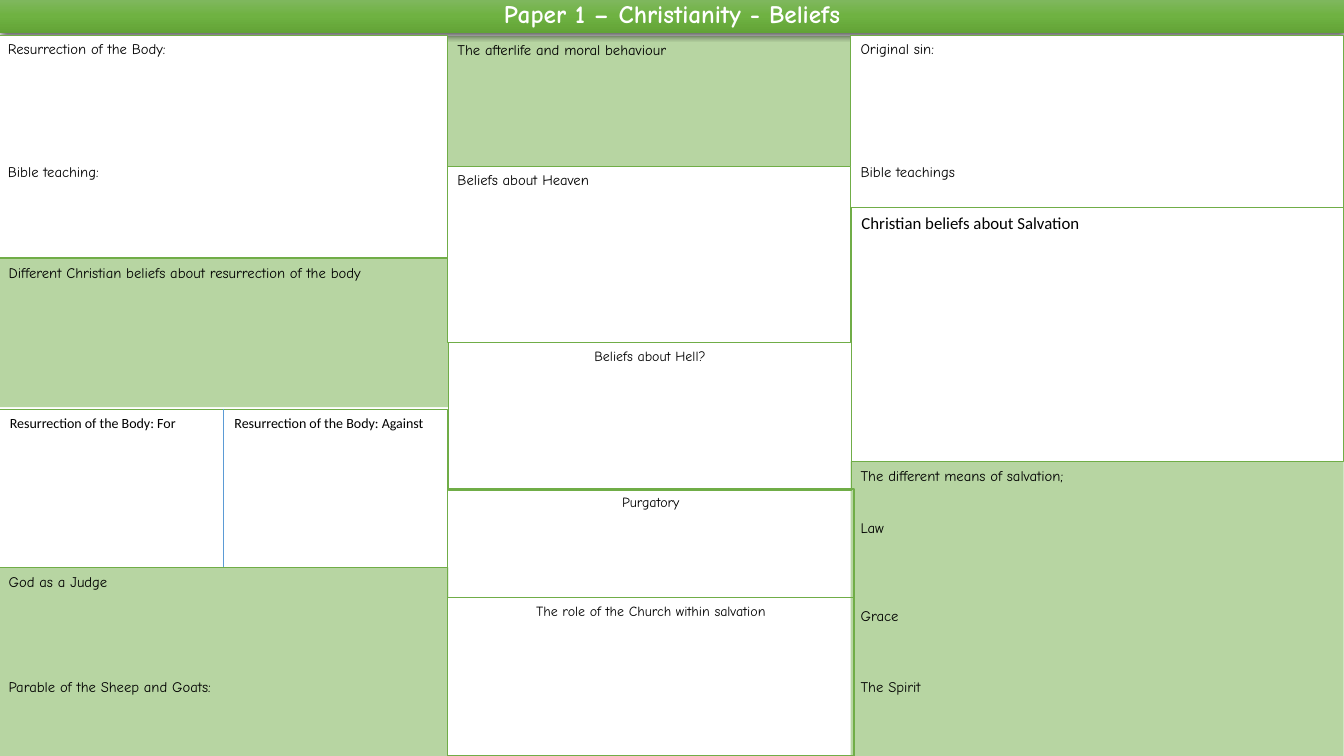
"""Build the revision sheet on Christian beliefs about salvation and the afterlife."""
from dataclasses import dataclass
from typing import NamedTuple, Optional

from lxml.etree import SubElement
from pptx import Presentation
from pptx.dml.color import RGBColor
from pptx.enum.shapes import MSO_CONNECTOR, MSO_SHAPE
from pptx.enum.text import MSO_ANCHOR, PP_ALIGN
from pptx.oxml import parse_xml
from pptx.oxml.ns import nsdecls, qn
from pptx.shapes.autoshape import Shape
from pptx.shapes.shapetree import SlideShapes
from pptx.util import Cm, Pt

GREEN = RGBColor(0x70, 0xAD, 0x47)
BLUE = RGBColor(0x5B, 0x9B, 0xD5)
WHITE = RGBColor(0xFF, 0xFF, 0xFF)
BLACK = RGBColor(0x00, 0x00, 0x00)
BANNER_STOPS = (
    (0, RGBColor(0x81, 0xB8, 0x61)),
    (50, RGBColor(0x6F, 0xB2, 0x42)),
    (100, RGBColor(0x62, 0xA3, 0x36)),
)
SLIDE_WIDTH, SLIDE_HEIGHT = 33.87, 19.05
WRITING_LINE = 12.55
PROMPT = {"name": "Comic Neue", "size": Pt(10.5)}
CENTRED_PROMPT = {"name": "Comic Neue", "size": Pt(10)}
HEADING = {"name": "Calibri", "size": Pt(12)}
SIDE_HEADING = {"name": "Calibri", "size": Pt(10)}
BANNER = {"name": "Comic Neue", "size": Pt(18), "bold": True}


class Prompt(NamedTuple):
    """A prompt and the number of writing lines left above it."""
    text: str
    lines_above: int = 0


@dataclass(frozen=True)
class Panel:
    """A box of the sheet, measured in centimetres."""
    left: float
    top: float
    width: float
    height: float
    prompts: tuple[Prompt, ...] = ()
    font: Optional[dict] = None
    fill: Optional[RGBColor] = None
    border: float = 0
    align: PP_ALIGN = PP_ALIGN.LEFT


TITLE = Panel(0, -0.05, SLIDE_WIDTH, 0.89, (Prompt("Paper 1 – Christianity - Beliefs"),),
              BANNER, align=PP_ALIGN.CENTER)
PANELS_BEHIND_TITLE = (
    Panel(11.28, 12.32, 10.24, 2.74, (Prompt("Purgatory"),),
          CENTRED_PROMPT, WHITE, 1, PP_ALIGN.CENTER),
    Panel(11.28, 0.91, 10.16, 6.25, (Prompt("The afterlife and moral behaviour"),), PROMPT, GREEN),
)
PANELS = (
    Panel(-0.05, 0.89, 11.33, 5.61,
          (Prompt("Resurrection of the Body:"), Prompt("Bible teaching:", 6)), PROMPT, WHITE, 1),
    Panel(-0.03, 6.53, 11.33, 3.73,
          (Prompt("Different Christian beliefs about resurrection of the body"),), PROMPT, GREEN),
    Panel(21.44, 0.89, 12.42, 4.34,
          (Prompt("Original sin:"), Prompt("Bible teachings", 6)), PROMPT, WHITE, 1),
    Panel(11.3, 8.64, 10.16, 3.71, (Prompt("Beliefs about Hell?"),),
          CENTRED_PROMPT, border=0.75, align=PP_ALIGN.CENTER),
    Panel(-0.03, 14.3, 11.33, 4.75,
          (Prompt("God as a Judge"), Prompt("Parable of the Sheep and Goats:", 5)), PROMPT, GREEN),
    Panel(0, 10.31, 11.28, 3.99, border=0.75),
    Panel(11.28, 4.19, 10.16, 4.45, (Prompt("Beliefs about Heaven"),), PROMPT, WHITE, 1),
    Panel(21.46, 5.23, 12.4, 6.4, (Prompt("Christian beliefs about Salvation"),),
          HEADING, border=0.75),
    Panel(11.28, 15.06, 10.24, 3.99, (Prompt("The role of the Church within salvation"),),
          CENTRED_PROMPT, WHITE, 1, PP_ALIGN.CENTER),
    Panel(21.44, 11.63, 12.42, 7.42,
          (Prompt("The different means of salvation;"), Prompt("Law", 2),
           Prompt("Grace", 4), Prompt("The Spirit", 3)), PROMPT, GREEN),
)
ARGUMENTS = (
    Panel(0, 10.31, 5.61, 0.69, (Prompt("Resurrection of the Body: For"),), SIDE_HEADING),
    Panel(5.66, 10.31, 5.61, 0.69, (Prompt("Resurrection of the Body: Against"),), SIDE_HEADING),
)


def bounds(panel: Panel) -> tuple[Cm, ...]:
    """Give the place and size of a panel as lengths."""
    return tuple(Cm(side) for side in (panel.left, panel.top, panel.width, panel.height))


def write_prompts(box: Shape, panel: Panel, color: RGBColor = BLACK) -> None:
    """Write the prompts of a panel with room for answers between them."""
    frame = box.text_frame
    frame.word_wrap = True
    frame.vertical_anchor = MSO_ANCHOR.TOP
    for index, prompt in enumerate(panel.prompts):
        paragraph = frame.add_paragraph() if index else frame.paragraphs[0]
        paragraph.alignment = panel.align
        paragraph.space_before = Pt(prompt.lines_above * WRITING_LINE)
        run = paragraph.add_run()
        run.text = prompt.text
        for attribute, value in panel.font.items():
            setattr(run.font, attribute, value)
        run.font.color.rgb = color


def draw_panel(shapes: SlideShapes, panel: Panel) -> None:
    """Draw a panel; green ones are half transparent."""
    box = shapes.add_shape(MSO_SHAPE.RECTANGLE, *bounds(panel))
    box.shadow.inherit = False
    if panel.fill is None:
        box.fill.background()
    else:
        box.fill.solid()
        box.fill.fore_color.rgb = panel.fill
    if panel.fill == GREEN:
        tint = box.fill._xPr.find(".//" + qn("a:srgbClr"))
        SubElement(tint, qn("a:alpha"), val="50000")
    if panel.border:
        box.line.color.rgb = GREEN
        box.line.width = Pt(panel.border)
    else:
        box.line.fill.background()
    write_prompts(box, panel)


def draw_title(shapes: SlideShapes) -> None:
    """Draw the shaded banner across the top."""
    banner = shapes.add_shape(MSO_SHAPE.RECTANGLE, *bounds(TITLE))
    banner.line.fill.background()
    banner.fill.gradient()
    banner.fill.gradient_angle = 270
    stops = banner.fill._xPr.find(".//" + qn("a:gsLst"))
    stops.clear()
    for percent, color in BANNER_STOPS:
        stop = SubElement(stops, qn("a:gs"), pos=str(percent * 1000))
        SubElement(stop, qn("a:srgbClr"), val=str(color))
    banner.shadow.inherit = False
    effects = banner._element.spPr.find(qn("a:effectLst"))
    effects.append(parse_xml(
        f'<a:outerShdw {nsdecls("a")} blurRad="{Pt(4.5)}" dist="{Pt(1.5)}" dir="5400000" '
        'algn="ctr" rotWithShape="0"><a:srgbClr val="000000"><a:alpha val="63000"/>'
        '</a:srgbClr></a:outerShdw>'))
    write_prompts(banner, TITLE, WHITE)
    banner.text_frame.vertical_anchor = MSO_ANCHOR.MIDDLE
    banner.text_frame.paragraphs[0].line_spacing = 0.9


def draw_arguments(shapes: SlideShapes) -> None:
    """Head the two sides of the debate and divide them."""
    for side in ARGUMENTS:
        write_prompts(shapes.add_textbox(*bounds(side)), side)
    divider = shapes.add_connector(
        MSO_CONNECTOR.STRAIGHT, Cm(5.64), Cm(10.31), Cm(5.64), Cm(14.3))
    divider.line.color.rgb = BLUE
    divider.line.width = Pt(0.5)
    SubElement(divider._element.spPr, qn("a:effectLst"))


def main() -> None:
    """Draw the sheet and save it."""
    deck = Presentation()
    deck.slide_width, deck.slide_height = Cm(SLIDE_WIDTH), Cm(SLIDE_HEIGHT)
    shapes = deck.slides.add_slide(deck.slide_layouts[6]).shapes
    for panel in PANELS_BEHIND_TITLE:
        draw_panel(shapes, panel)
    draw_title(shapes)
    for panel in PANELS:
        draw_panel(shapes, panel)
    draw_arguments(shapes)
    deck.save("out.pptx")


if __name__ == "__main__":
    main()
